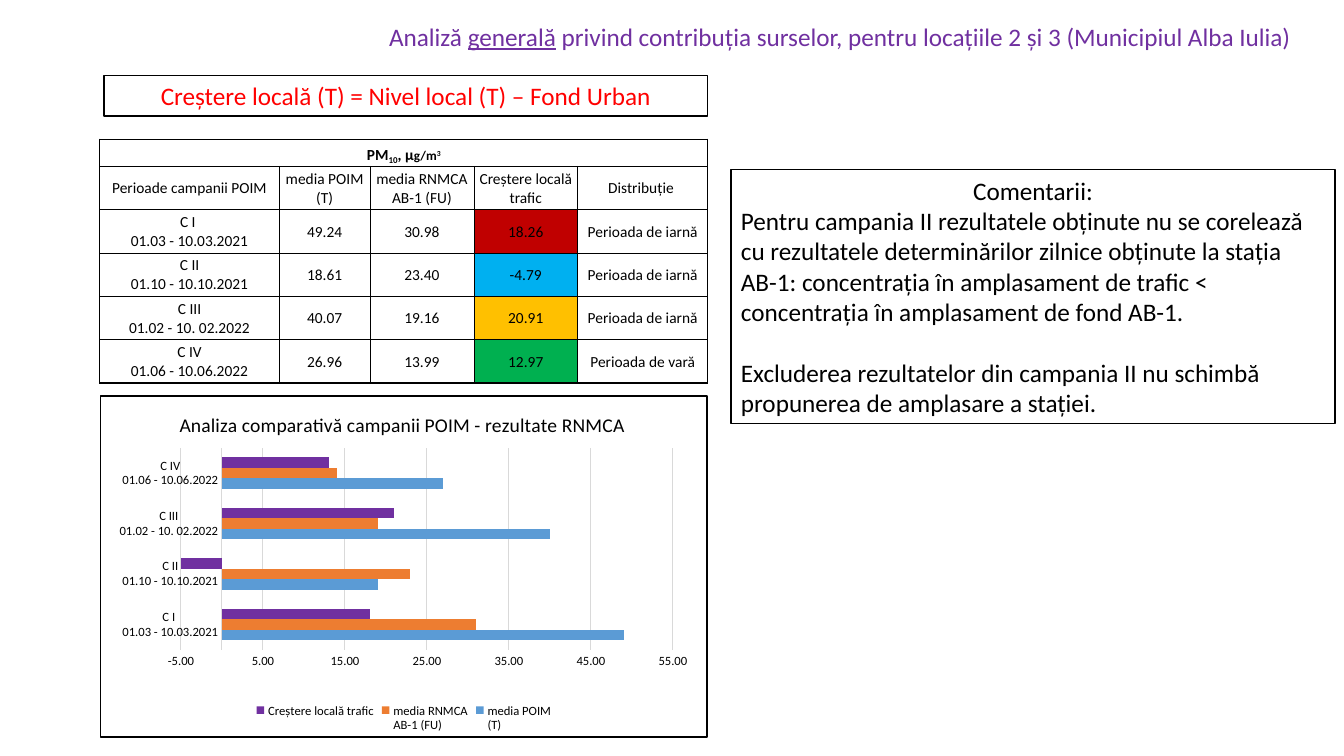
from lxml import etree
from pptx import Presentation
from pptx.chart import data
from pptx.dml import color
from pptx.enum import chart as charts, shapes, text
from pptx.oxml import ns, parse_xml
from pptx.util import Inches, Pt

COLORS = {
    "black": "000000", "white": "FFFFFF", "purple": "7030A0", "red": "FF0000",
    "grid": "D9D9D9", "blue": "5B9BD5", "orange": "ED7D31",
    "dark_red": "C00000", "sky": "00B0F0", "amber": "FFC000", "green": "00B050",
}
RGB = {name: color.RGBColor.from_string(value) for name, value in COLORS.items()}
LEFT, COLUMN_WIDTH, COMMENTS_LEFT = 0.99, 6.03, 7.25
BOX_WIDTH, CHART_HEIGHT = 5.99, 3.4
CENTER = text.PP_ALIGN.CENTER


def write(paragraph, content, size=18, tint="black", bold=False, underline=False, baseline=0, align=None):
    if align is not None:
        paragraph.alignment = align
    for number, line in enumerate(content.split("\n")):
        if number:
            paragraph.add_line_break()
        run = paragraph.add_run()
        run.text = line
        run.font.name = "Calibri"
        run.font.size = Pt(size)
        run.font.bold = bold
        run.font.underline = underline
        run.font.color.rgb = RGB[tint]
        if baseline:
            run._r.get_or_add_rPr().set("baseline", str(baseline * 1000))


def place(element, index, **values):
    for old in element.findall(ns.qn("c:layout")):
        element.remove(old)
    layout = etree.Element(ns.qn("c:layout"))
    manual = etree.SubElement(layout, ns.qn("c:manualLayout"))
    for name, value in values.items():
        etree.SubElement(manual, ns.qn(f"c:{name}")).set("val", str(value))
    element.insert(index, layout)


presentation = Presentation()
presentation.slide_width = Inches(13.33)
presentation.slide_height = Inches(7.5)
slide = presentation.slides.add_slide(presentation.slide_layouts[6])

boxes = []
for left, top, height in ((LEFT + 0.04, 0.75, 0.4), (COMMENTS_LEFT, 1.68, 2.52)):
    box = slide.shapes.add_shape(
        shapes.MSO_SHAPE.RECTANGLE, Inches(left), Inches(top), Inches(BOX_WIDTH), Inches(height))
    box.shadow.inherit = False
    box.fill.solid()
    box.fill.fore_color.rgb = RGB["white"]
    box.line.color.rgb = RGB["black"]
    box.line.width = Pt(1)
    box.text_frame.word_wrap = True
    box.text_frame.auto_size = text.MSO_AUTO_SIZE.SHAPE_TO_FIT_TEXT
    boxes.append(box.text_frame)
formula, comments = boxes

write(formula.paragraphs[0], "Creștere locală (T) = Nivel local (T) – Fond Urban", tint="red", align=CENTER)
write(comments.paragraphs[0], "Comentarii:", align=CENTER)
for content, space in (
    ("Pentru campania II rezultatele obținute nu se corelează cu rezultatele determinărilor zilnice "
     "obținute la stația AB-1: concentrația în amplasament de trafic < concentrația în amplasament "
     "de fond AB-1.", 0),
    ("Excluderea rezultatelor din campania II nu schimbă propunerea de amplasare a stației.", 22),
):
    paragraph = comments.add_paragraph()
    paragraph.space_before = Pt(space)
    write(paragraph, content, align=text.PP_ALIGN.LEFT)

heading = slide.shapes.add_textbox(Inches(3.76), Inches(0.16), Inches(9.18), Inches(0.4)).text_frame
heading.word_wrap = False
heading.auto_size = text.MSO_AUTO_SIZE.SHAPE_TO_FIT_TEXT
for content, underline in (
    ("Analiză ", False),
    ("generală", True),
    (" privind contribuția surselor, pentru locațiile 2 și 3 (Municipiul Alba Iulia)", False),
):
    write(heading.paragraphs[0], content, tint="purple", underline=underline)

headers = ["Perioade campanii POIM", "media POIM\n(T)", "media RNMCA\nAB-1 (FU)",
           "Creștere locală trafic", "Distribuție "]
campaigns = [
    ("C I \n01.03 - 10.03.2021", 49.24, 30.98, 18.26, "Perioada de iarnă"),
    ("C II\n01.10 - 10.10.2021", 18.61, 23.40, -4.79, "Perioada de iarnă"),
    ("C III\n01.02 - 10. 02.2022", 40.07, 19.16, 20.91, "Perioada de iarnă"),
    ("C IV\n01.06 - 10.06.2022", 26.96, 13.99, 12.97, "Perioada de vară"),
]
growth_fills = dict(enumerate(("dark_red", "sky", "amber", "green"), start=2))
rows = [[""] * 5, headers] + [
    [value if isinstance(value, str) else f"{value:.2f}" for value in campaign] for campaign in campaigns]

table = slide.shapes.add_table(
    6, 5, Inches(LEFT), Inches(1.38), Inches(COLUMN_WIDTH), Inches(2.41)).table
table.first_row = False
table.horz_banding = False
for column, width in zip(table.columns, (1.78, 0.9, 1.03, 1.03, 1.29)):
    column.width = Inches(width)
for number, row in enumerate(table.rows):
    row.height = Inches(0.43 if number else 0.27)
table.cell(0, 0).merge(table.cell(0, 4))

for i, row in enumerate(rows):
    for j, content in enumerate(row):
        cell = table.cell(i, j)
        cell.margin_left = cell.margin_top = cell.margin_right = Inches(0.01)
        cell.margin_bottom = 0
        cell.vertical_anchor = text.MSO_ANCHOR.MIDDLE if i else text.MSO_ANCHOR.BOTTOM
        outer_edges = {"L": j == 0, "R": j == 4, "T": i == 0, "B": i == 5}
        for side, outer in outer_edges.items():
            cell._tc.get_or_add_tcPr().append(parse_xml(
                f'<a:ln{side} {ns.nsdecls("a")} w="{Pt(1 if outer else 0.5)}"><a:solidFill>'
                f'<a:srgbClr val="{COLORS["black"]}"/></a:solidFill></a:ln{side}>'))
        if j == 3 and i in growth_fills:
            cell.fill.solid()
            cell.fill.fore_color.rgb = RGB[growth_fills[i]]
        else:
            cell.fill.background()
        if content:
            write(cell.text_frame.paragraphs[0], content, size=11, align=CENTER)

for content, size, baseline in (("PM", 11, 0), ("10", 11, -25), (", µ", 11, 0), ("g/m", 9.4, 0), ("3", 9.4, 30)):
    write(table.cell(0, 0).text_frame.paragraphs[0], content, size=size, bold=True,
          baseline=baseline, align=CENTER)

chart_data = data.CategoryChartData(number_format="0.00")
chart_data.categories = [campaign[0] for campaign in campaigns]
for column in (1, 2, 3):
    chart_data.add_series(headers[column], [round(campaign[column]) for campaign in campaigns])
chart = slide.shapes.add_chart(
    charts.XL_CHART_TYPE.BAR_CLUSTERED, Inches(LEFT), Inches(3.92), Inches(COLUMN_WIDTH),
    Inches(CHART_HEIGHT), chart_data).chart
chart.has_title = True
write(chart.chart_title.text_frame.paragraphs[0],
      "Analiza comparativă campanii POIM - rezultate RNMCA", size=14)
chart.has_legend = True
chart.legend.position = charts.XL_LEGEND_POSITION.BOTTOM
chart.legend.include_in_layout = False
for font, size in ((chart.font, 10), (chart.legend.font, 9),
                   (chart.category_axis.tick_labels.font, 9), (chart.value_axis.tick_labels.font, 9)):
    font.name = "Calibri"
    font.size = Pt(size)
    font.color.rgb = RGB["black"]

plot = chart.plots[0]
plot.gap_width = 182
plot.overlap = 0
plot.vary_by_categories = False
for series, name in zip(plot.series, ("blue", "orange", "purple")):
    series.format.fill.solid()
    series.format.fill.fore_color.rgb = RGB[name]
    series.invert_if_negative = False

value_axis = chart.value_axis
value_axis.minimum_scale, value_axis.maximum_scale, value_axis.major_unit = -5, 55, 10
value_axis.tick_labels.number_format = "0.00"
value_axis.tick_labels.number_format_is_linked = False
value_axis.format.line.fill.background()
for axis in (chart.category_axis, value_axis):
    axis.major_tick_mark = axis.minor_tick_mark = charts.XL_TICK_MARK.NONE
for line in (chart.category_axis.format.line, value_axis.major_gridlines.format.line):
    line.color.rgb = RGB["grid"]
    line.width = Pt(0.75)

place(chart.chart_title._element.find(ns.qn("c:tx")).getparent(), 1,
      xMode="edge", yMode="edge", x=0.75 / COLUMN_WIDTH, y=0.12 / CHART_HEIGHT)
place(chart._chartSpace.chart.plotArea, 0, layoutTarget="inner", xMode="edge", yMode="edge",
      x=0.8 / COLUMN_WIDTH, y=0.52 / CHART_HEIGHT, w=4.89 / COLUMN_WIDTH, h=2.01 / CHART_HEIGHT)
chart._chartSpace.find(ns.qn("c:txPr")).addprevious(parse_xml(
    f'<c:spPr {ns.nsdecls("c", "a")}><a:solidFill><a:srgbClr val="{COLORS["white"]}"/></a:solidFill>'
    f'<a:ln w="{Pt(1)}"><a:solidFill><a:srgbClr val="{COLORS["black"]}"/></a:solidFill></a:ln></c:spPr>'))

presentation.save("out.pptx")
